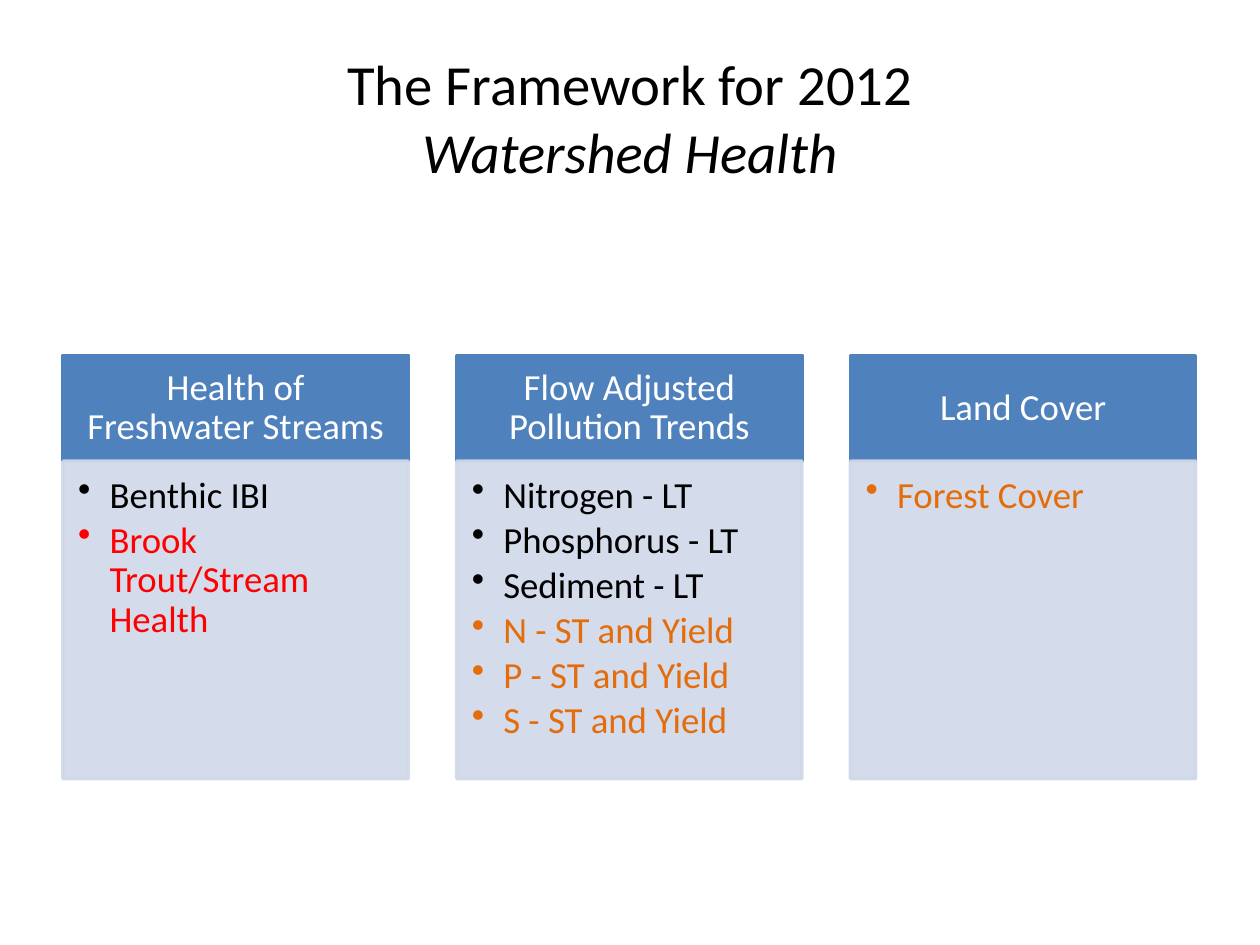
from dataclasses import dataclass

from lxml.etree import SubElement
from pptx import Presentation
from pptx.dml.color import RGBColor
from pptx.enum.shapes import MSO_SHAPE as Shape
from pptx.enum.text import MSO_ANCHOR as Anchor, MSO_AUTO_SIZE as AutoSize, PP_ALIGN as Align
from pptx.oxml.ns import qn
from pptx.util import Inches, Pt


@dataclass(frozen=True)
class Theme:
    font: str = "Calibri"
    title_size: float = 32.4
    body_size: float = 21
    line_width: float = 2
    line_spacing: float = 0.9
    panel_opacity: int = 90
    black: str = "000000"
    white: str = "FFFFFF"
    blue: str = "4F81BD"
    pale_blue: str = "D0D8E8"
    red: str = "FF0000"
    orange: str = "E46C0A"


THEME = Theme()
MARGIN = 0.5
COLUMN_WIDTH, COLUMN_STEP = 2.74, 3.125
HEADING_TOP, HEADING_HEIGHT, PANEL_HEIGHT = 2.82, 0.84, 2.52

COLUMNS = [
    ("Health of Freshwater Streams",
     [("Benthic IBI", THEME.black), ("Brook Trout/Stream Health", THEME.red)]),
    ("Flow Adjusted Pollution Trends",
     [("Nitrogen - LT", THEME.black), ("Phosphorus - LT", THEME.black),
      ("Sediment - LT", THEME.black), ("N - ST and Yield", THEME.orange),
      ("P - ST and Yield", THEME.orange), ("S - ST and Yield", THEME.orange)]),
    ("Land Cover", [("Forest Cover", THEME.orange)]),
]


def add_run(paragraph, text, size, color, italic=None):
    run = paragraph.add_run()
    run.text = text
    run.font.name = THEME.font
    run.font.size = Pt(size)
    run.font.italic = italic
    run.font.color.rgb = RGBColor.from_string(color)


def add_title(slide):
    title = slide.shapes.title
    title.left, title.top = Inches(MARGIN), Inches(0.3)
    title.width, title.height = Inches(9), Inches(1.25)
    frame = title.text_frame
    frame.auto_size = AutoSize.NONE
    frame.vertical_anchor = Anchor.MIDDLE
    paragraph = frame.paragraphs[0]
    paragraph.alignment = Align.CENTER
    add_run(paragraph, "The Framework for 2012", THEME.title_size, THEME.black)
    paragraph.add_line_break()
    add_run(paragraph, "Watershed Health", THEME.title_size, THEME.black, italic=True)


def add_box(slide, column, top, height, color, insets, anchor):
    """Add a filled rectangle in a grid column; insets run left, top, right, bottom."""
    left = MARGIN + column * COLUMN_STEP
    box = slide.shapes.add_shape(
        Shape.RECTANGLE, Inches(left), Inches(top), Inches(COLUMN_WIDTH), Inches(height))
    box.shadow.inherit = False
    box.fill.solid()
    box.fill.fore_color.rgb = RGBColor.from_string(color)
    box.line.color.rgb = RGBColor.from_string(color)
    box.line.width = Pt(THEME.line_width)
    frame = box.text_frame
    frame.word_wrap = True
    frame.vertical_anchor = anchor
    (frame.margin_left, frame.margin_top,
     frame.margin_right, frame.margin_bottom) = map(Inches, insets)
    return box


def set_opacity(shape, percent):
    """Apply the opacity to both the fill and the outline."""
    for color in shape._element.spPr.iter(qn("a:srgbClr")):
        SubElement(color, qn("a:alpha"), val=str(percent * 1000))


def add_bullet(paragraph):
    paragraph.level = 1
    properties = paragraph._p.get_or_add_pPr()
    properties.set("marL", str(Inches(0.25)))
    properties.set("indent", str(-Inches(0.25)))
    SubElement(properties, qn("a:buChar"), char="•")


def add_heading(slide, column, text):
    box = add_box(slide, column, HEADING_TOP, HEADING_HEIGHT, THEME.blue,
                  (0.16, 0.09, 0.16, 0.09), Anchor.MIDDLE)
    paragraph = box.text_frame.paragraphs[0]
    paragraph.alignment = Align.CENTER
    paragraph.line_spacing = THEME.line_spacing
    add_run(paragraph, text, THEME.body_size, THEME.white)


def add_panel(slide, column, items):
    box = add_box(slide, column, HEADING_TOP + HEADING_HEIGHT, PANEL_HEIGHT,
                  THEME.pale_blue, (0.12, 0.12, 0.16, 0.18), Anchor.TOP)
    set_opacity(box, THEME.panel_opacity)
    frame = box.text_frame
    for index, (text, color) in enumerate(items):
        paragraph = frame.add_paragraph() if index else frame.paragraphs[0]
        paragraph.alignment = Align.LEFT
        paragraph.line_spacing = THEME.line_spacing
        paragraph.space_after = Pt(0.15 * THEME.body_size)
        add_bullet(paragraph)
        add_run(paragraph, text, THEME.body_size, color)


def main():
    presentation = Presentation()
    presentation.slide_width, presentation.slide_height = Inches(10), Inches(7.5)
    title_only = presentation.slide_layouts.get_by_name("Title Only")
    slide = presentation.slides.add_slide(title_only)
    add_title(slide)
    for column, (heading, items) in enumerate(COLUMNS):
        add_heading(slide, column, heading)
        add_panel(slide, column, items)
    presentation.save("out.pptx")


if __name__ == "__main__":
    main()
